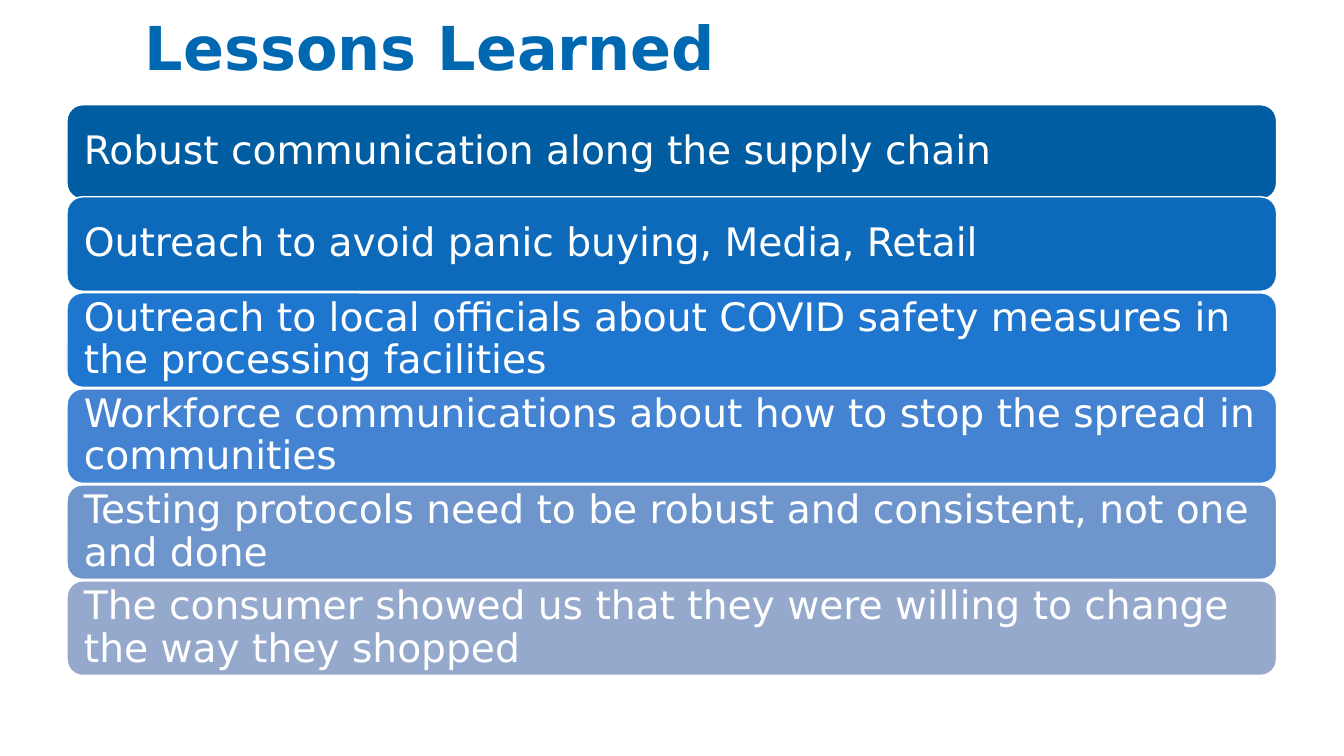
import dataclasses

import pptx
import pptx.dml.color
import pptx.enum.shapes
import pptx.enum.text
import pptx.slide
import pptx.text.text
import pptx.util

Cm = pptx.util.Cm
FONT = "DejaVu Sans"
COLOURS = {
    "title": "0067B1",
    "white": "FFFFFF",
    "supply": "005DA1",
    "retail": "0D6ABA",
    "officials": "1F76CF",
    "workforce": "4383D2",
    "testing": "6F95CD",
    "consumer": "95A9CD",
}
BAR_LEFT, BAR_WIDTH, BAR_HEIGHT = 1.69, 30.48, 2.38
FIRST_TOP, SECOND_TOP, PITCH = 2.64, 4.96, 2.42
INSET = 0.31


@dataclasses.dataclass(frozen=True)
class Lesson:
    text: str
    colour: str


LESSONS = [
    Lesson("Robust communication along the supply chain", "supply"),
    Lesson("Outreach to avoid panic buying, Media, Retail", "retail"),
    Lesson("Outreach to local officials about COVID safety measures in the processing facilities", "officials"),
    Lesson("Workforce communications about how to stop the spread in communities", "workforce"),
    Lesson("Testing protocols need to be robust and consistent, not one and done", "testing"),
    Lesson("The consumer showed us that they were willing to change the way they shopped", "consumer"),
]


def rgb(name: str) -> pptx.dml.color.RGBColor:
    return pptx.dml.color.RGBColor.from_string(COLOURS[name])


def write_line(frame: pptx.text.text.TextFrame, text: str, size: float, colour: str, bold: bool = False) -> None:
    frame.word_wrap = True
    frame.auto_size = pptx.enum.text.MSO_AUTO_SIZE.NONE
    paragraph = frame.paragraphs[0]
    paragraph.alignment = pptx.enum.text.PP_ALIGN.LEFT
    paragraph.line_spacing = 0.9
    paragraph.space_before = pptx.util.Pt(0)
    run = paragraph.add_run()
    run.text = text
    run.font.name = FONT
    run.font.size = pptx.util.Pt(size)
    run.font.bold = bold
    run.font.color.rgb = rgb(colour)


def add_title(slide: pptx.slide.Slide, text: str) -> None:
    title = slide.shapes.title
    title.left, title.top, title.width, title.height = Cm(3.39), Cm(0.33), Cm(30.48), Cm(3.18)
    title.text_frame.vertical_anchor = pptx.enum.text.MSO_ANCHOR.TOP
    write_line(title.text_frame, text, 43.2, "title", bold=True)


def add_lesson(slide: pptx.slide.Slide, lesson: Lesson, top: float) -> None:
    bar = slide.shapes.add_shape(
        pptx.enum.shapes.MSO_SHAPE.ROUNDED_RECTANGLE,
        Cm(BAR_LEFT), Cm(top), Cm(BAR_WIDTH), Cm(BAR_HEIGHT),
    )
    bar.shadow.inherit = False
    bar.fill.solid()
    bar.fill.fore_color.rgb = rgb(lesson.colour)
    bar.line.color.rgb = rgb("white")
    bar.line.width = pptx.util.Pt(1)
    frame = bar.text_frame
    frame.margin_left = frame.margin_right = Cm(INSET)
    frame.margin_top = frame.margin_bottom = Cm(INSET)
    frame.vertical_anchor = pptx.enum.text.MSO_ANCHOR.MIDDLE
    write_line(frame, lesson.text, 28, "white")


def main() -> None:
    presentation = pptx.Presentation()
    presentation.slide_width, presentation.slide_height = Cm(33.87), Cm(19.05)
    slide = presentation.slides.add_slide(presentation.slide_layouts.get_by_name("Title Only"))
    add_title(slide, "Lessons Learned")
    tops = [FIRST_TOP] + [SECOND_TOP + PITCH * row for row in range(len(LESSONS) - 1)]
    for lesson, top in zip(LESSONS, tops):
        add_lesson(slide, lesson, top)
    presentation.save("out.pptx")


if __name__ == "__main__":
    main()
